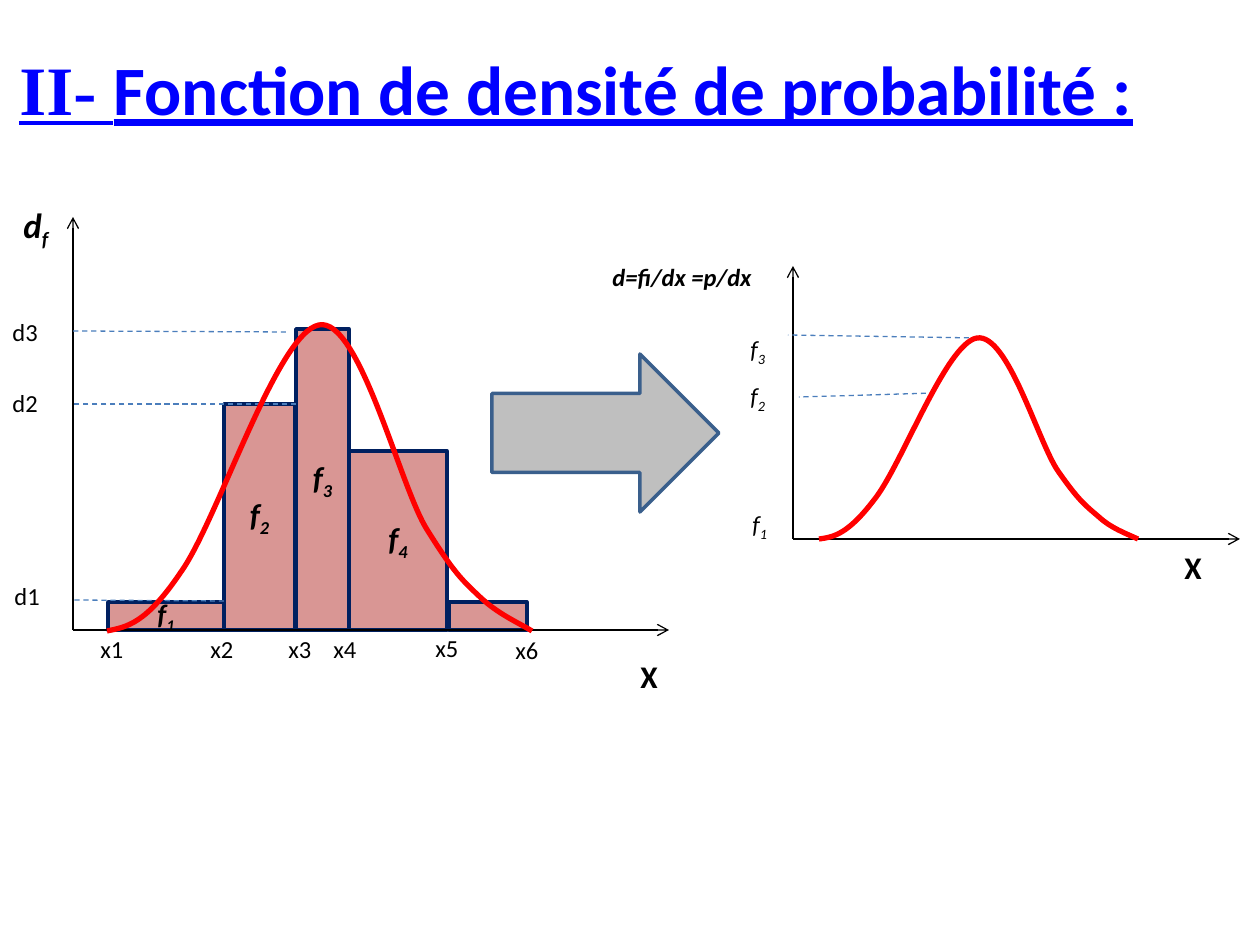
from dataclasses import dataclass

from lxml.etree import SubElement
from pptx import Presentation
from pptx.dml.color import RGBColor as Color
from pptx.enum.dml import MSO_LINE as Dash
from pptx.enum.shapes import MSO_CONNECTOR as Link, MSO_SHAPE as Preset
from pptx.enum.text import MSO_ANCHOR as Anchor, PP_ALIGN as Align
from pptx.oxml.ns import qn
from pptx.util import Pt

PX = 914400 / 126


@dataclass
class Theme:
    font: str = "Calibri"
    title_font: str = "Times New Roman"
    black: Color = Color(0, 0, 0)
    title: Color = Color(0, 0, 255)
    bar: Color = Color(0xD9, 0x96, 0x94)
    bar_edge: Color = Color(0x00, 0x20, 0x60)
    guide: Color = Color(0x4B, 0x7E, 0xBC)
    curve: Color = Color(255, 0, 0)
    arrow: Color = Color(0xBF, 0xBF, 0xBF)
    arrow_edge: Color = Color(0x3A, 0x5F, 0x8C)
    title_size: float = 39.6
    density_size: int = 20
    large: int = 18
    medium: int = 16
    small: int = 14


theme = Theme()


def emu(*lengths):
    return [round(length * PX) for length in lengths]


def write(shape, text, size, bold=False, italic=False, color=theme.black):
    """Fill the first paragraph; what follows "_" becomes a subscript."""
    shape.text_frame.word_wrap = True
    para = shape.text_frame.paragraphs[0]
    font = para.font
    font.name, font.size, font.bold, font.italic = theme.font, Pt(size), bold, italic
    font.color.rgb = color
    base, _, index = text.partition("_")
    para.add_run().text = base
    if index:
        span = para.add_run()
        span.text = index
        span._r.get_or_add_rPr().set("baseline", "-25000")
    return para


deck = Presentation()
deck.slide_width, deck.slide_height = emu(1260, 945)
page = deck.slides.add_slide(deck.slide_layouts[6])
shapes = page.shapes

# Title
title = shapes.add_textbox(*emu(0, 39, 1152, 98))
title.text_frame.vertical_anchor = Anchor.MIDDLE
para = write(title, "II- ", theme.title_size, bold=True, color=theme.title)
para.alignment = Align.CENTER
para.font.underline = True
para.runs[0].font.name = theme.title_font
para.add_run().text = "Fonction de densité de probabilité :"

# Histogram bars, all standing on the x axis
baseline = 630
bars = [
    (108, 224, 602, "f_1", theme.medium),
    (224, 295, 404, "f_2", theme.large),
    (296, 349, 329, "f_3", theme.large),
    (349, 447, 451, "f_4", theme.large),
    (449, 527, 602, "", theme.large),
]
for left, right, top, name, size in bars:
    bar = shapes.add_shape(Preset.RECTANGLE, *emu(left, top, right - left, baseline - top))
    bar.shadow.inherit = False
    bar.fill.solid()
    bar.fill.fore_color.rgb = theme.bar
    bar.line.color.rgb = theme.bar_edge
    bar.line.width = Pt(2)
    if name:
        bar.text_frame.vertical_anchor = Anchor.MIDDLE
        write(bar, name, size, bold=True, italic=True).alignment = Align.CENTER

# Axes and dashed guides of both graphs
axes = [
    (73, 630, 73, 217),
    (73, 630, 669, 630),
    (793, 539, 793, 266),
    (793, 539, 1240, 539),
]
guides = [
    (286, 332, 73, 331),
    (296, 404, 73, 404),
    (224, 601, 73, 600),
    (978, 338, 788, 335),
    (935, 393, 799, 397),
]
for ends in axes + guides:
    line = shapes.add_connector(Link.STRAIGHT, *emu(*ends))
    line.line.width = Pt(0.75)
    if ends in axes:
        line.line.color.rgb = theme.black
        SubElement(line.line._get_or_add_ln(), qn("a:tailEnd"), type="arrow")
    else:
        line.line.color.rgb = theme.guide
        line.line.dash_style = Dash.DASH
    SubElement(line._element.spPr, qn("a:effectLst"))

# Density curves: a start point, then two handles and an end point per Bézier piece
curves = [
    [(107, 631), (127, 627), (146, 624), (181, 572), (217, 522), (277, 333), (319, 325),
     (359, 317), (399, 483), (426, 528), (454, 573), (462, 580), (480, 597),
     (498, 614), (517, 622), (532, 631)],
    [(819, 539), (834, 537), (848, 534), (874, 500), (901, 467), (946, 343), (977, 338),
     (1008, 333), (1038, 442), (1058, 471), (1079, 501), (1085, 505), (1099, 517),
     (1111, 528), (1125, 533), (1138, 539)],
]
for knots in curves:
    outline = shapes.build_freeform(*knots[0], scale=PX)
    outline.add_line_segments(knots[1:], close=False)
    curve = outline.convert_to_shape()
    curve.shadow.inherit = False
    curve.fill.background()
    curve.line.color.rgb = theme.curve
    curve.line.width = Pt(3)
    # Every three straight segments become one Bézier piece
    route = next(curve._element.iter(qn("a:path")))
    segments = route.findall(qn("a:lnTo"))
    for first in range(0, len(segments), 3):
        piece = SubElement(route, qn("a:cubicBezTo"))
        for segment in segments[first:first + 3]:
            piece.append(segment[0])
            route.remove(segment)

# Arrow from the histogram to the continuous density
arrow = shapes.add_shape(Preset.RIGHT_ARROW, *emu(492, 354, 227, 158))
arrow.shadow.inherit = False
arrow.fill.solid()
arrow.fill.fore_color.rgb = theme.arrow
arrow.line.color.rgb = theme.arrow_edge
arrow.line.width = Pt(2)

# Labels: text, left, top, width, height, size, bold, italic
ticks = [("x1", 88, 628), ("x2", 198, 628), ("x3", 276, 628),
         ("x4", 321, 628), ("x5", 423, 627), ("x6", 503, 629)]
levels = [("d1", 2, 575, 84), ("d2", 0, 382, 81), ("d3", 0, 311, 81)]
heights = [("f_1", 740, 503, 63), ("f_2", 738, 375, 60), ("f_3", 738, 328, 60)]
labels = [(*tick, 53, 43, theme.small, False, False) for tick in ticks]
labels += [(*level, 40, theme.small, False, False) for level in levels]
labels += [(*height, 43, theme.small, False, True) for height in heights]
labels += [
    ("d_f", 11, 197, 81, 55, theme.density_size, True, True),
    ("d=fi/dx =p/dx", 600, 256, 306, 43, theme.small, True, True),
    ("X", 628, 651, 34, 32, theme.large, True, False),
    ("X", 1172, 542, 59, 50, theme.large, True, False),
]
for text, left, top, width, height, size, bold, italic in labels:
    box = shapes.add_textbox(*emu(left, top, width, height))
    write(box, text, size, bold, italic)

deck.save("out.pptx")
